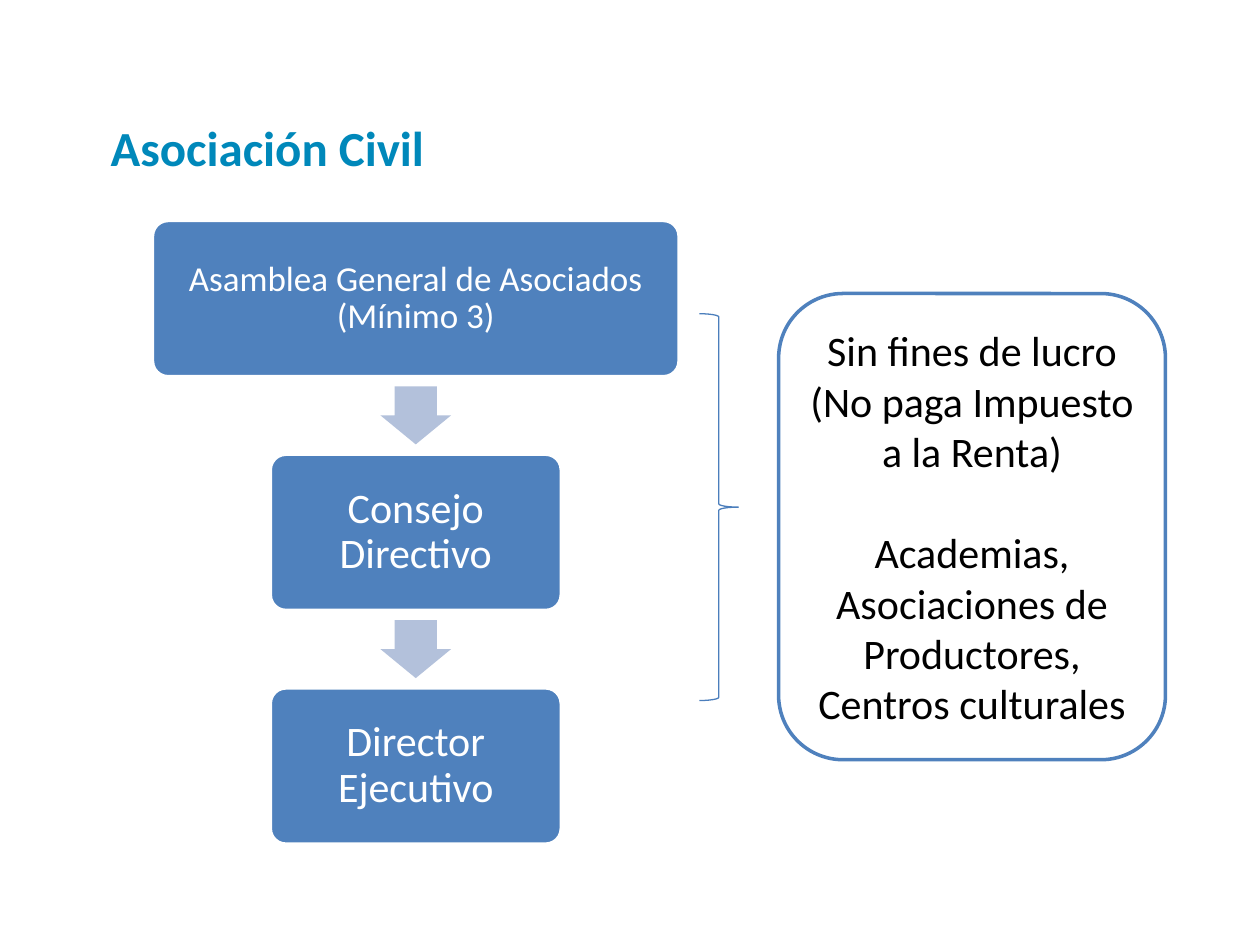
from pptx import Presentation
from pptx.dml.color import RGBColor
from pptx.enum.shapes import MSO_SHAPE
from pptx.enum.text import MSO_ANCHOR, PP_ALIGN
from pptx.util import Inches, Pt

WHITE = RGBColor(0xFF, 0xFF, 0xFF)
BLACK = RGBColor(0x00, 0x00, 0x00)
TITLE_BLUE = RGBColor(0x00, 0x88, 0xBA)
BOX_BLUE = RGBColor(0x4F, 0x81, 0xBD)
BRACE_BLUE = RGBColor(0x4B, 0x7E, 0xBC)
ARROW_BLUE = RGBColor(0xB3, 0xC1, 0xDB)


def write_text(frame, *texts, size=24, color=BLACK, bold=False,
               align=PP_ALIGN.CENTER, insets=(0.1, 0.05), spacing=None, gap=0):
    """Write one paragraph per text, with gap points between paragraphs."""
    frame.word_wrap = True
    frame.vertical_anchor = MSO_ANCHOR.MIDDLE
    frame.margin_left = frame.margin_right = Inches(insets[0])
    frame.margin_top = frame.margin_bottom = Inches(insets[1])
    for index, text in enumerate(texts):
        para = frame.add_paragraph() if index else frame.paragraphs[0]
        para.text = text
        para.alignment = align
        if spacing:
            para.line_spacing = spacing
        if index and gap:
            para.space_before = Pt(gap)
        for span in para.runs:
            span.font.name = "Calibri"
            span.font.size = Pt(size)
            span.font.bold = bold
            span.font.color.rgb = color


class SlideBuilder:
    """Holds the current slide and its style."""

    outline_width = 2
    box_rounding = 0.1

    def __init__(self, page):
        self.page = page

    def title(self, text, left, top, width, height):
        box = self.page.shapes.add_textbox(
            Inches(left), Inches(top), Inches(width), Inches(height))
        write_text(box.text_frame, text, size=28, color=TITLE_BLUE,
                   bold=True, align=PP_ALIGN.LEFT)

    def shape(self, kind, left, top, width, height, fill=None, line=None,
              line_width=outline_width, adjustments=()):
        shape = self.page.shapes.add_shape(
            kind, Inches(left), Inches(top), Inches(width), Inches(height))
        shape.shadow.inherit = False
        for index, value in enumerate(adjustments):
            shape.adjustments[index] = value
        if fill is None:
            shape.fill.background()
        else:
            shape.fill.solid()
            shape.fill.fore_color.rgb = fill
        if line is None:
            shape.line.fill.background()
        else:
            shape.line.color.rgb = line
            shape.line.width = Pt(line_width)
        return shape

    def level(self, text, center, top, width, height, size, inset):
        box = self.shape(MSO_SHAPE.ROUNDED_RECTANGLE, center - width / 2, top,
                         width, height, BOX_BLUE, WHITE,
                         adjustments=[self.box_rounding])
        write_text(box.text_frame, text, size=size, color=WHITE,
                   insets=(inset, inset), spacing=0.9)

    def down_arrow(self, center, middle, width=0.56, height=0.46):
        self.shape(MSO_SHAPE.DOWN_ARROW, center - width / 2,
                   middle - height / 2, width, height, ARROW_BLUE,
                   adjustments=[0.6, 0.5])

    def brace(self, left, top, width, height):
        self.shape(MSO_SHAPE.RIGHT_BRACE, left, top, width, height,
                   line=BRACE_BLUE, line_width=0.75)

    def note(self, texts, left, top, width, height):
        box = self.shape(MSO_SHAPE.ROUNDED_RECTANGLE, left, top, width, height,
                         WHITE, BOX_BLUE)
        write_text(box.text_frame, *texts, gap=29)


def main():
    deck = Presentation()
    deck.slide_width, deck.slide_height = Inches(10), Inches(7.5)
    builder = SlideBuilder(deck.slides.add_slide(deck.slide_layouts[6]))

    builder.title("Asociación Civil", 0.78, 0.78, 8.08, 0.77)

    # Hierarchy: equal steps down, an arrow in each gap
    center, first_top, last_top, height = 3.3, 1.75, 5.46, 1.24
    levels = [
        ("Asamblea General de Asociados\n(Mínimo 3)", 4.18, 20, 0.08),
        ("Consejo Directivo", 2.31, 24, 0.1),
        ("Director Ejecutivo", 2.31, 24, 0.1),
    ]
    step = (last_top - first_top) / (len(levels) - 1)
    for index, (text, width, size, inset) in enumerate(levels):
        top = first_top + index * step
        if index:
            builder.down_arrow(center, top - (step - height) / 2)
        builder.level(text, center, top, width, height, size, inset)

    # Brace and note on the right
    builder.brace(5.55, 2.49, 0.31, 3.07)
    builder.note(
        ["Sin fines de lucro (No paga Impuesto a la Renta)",
         "Academias, Asociaciones de Productores, Centros culturales"],
        6.18, 2.33, 3.07, 3.7)

    deck.save("out.pptx")


if __name__ == "__main__":
    main()
